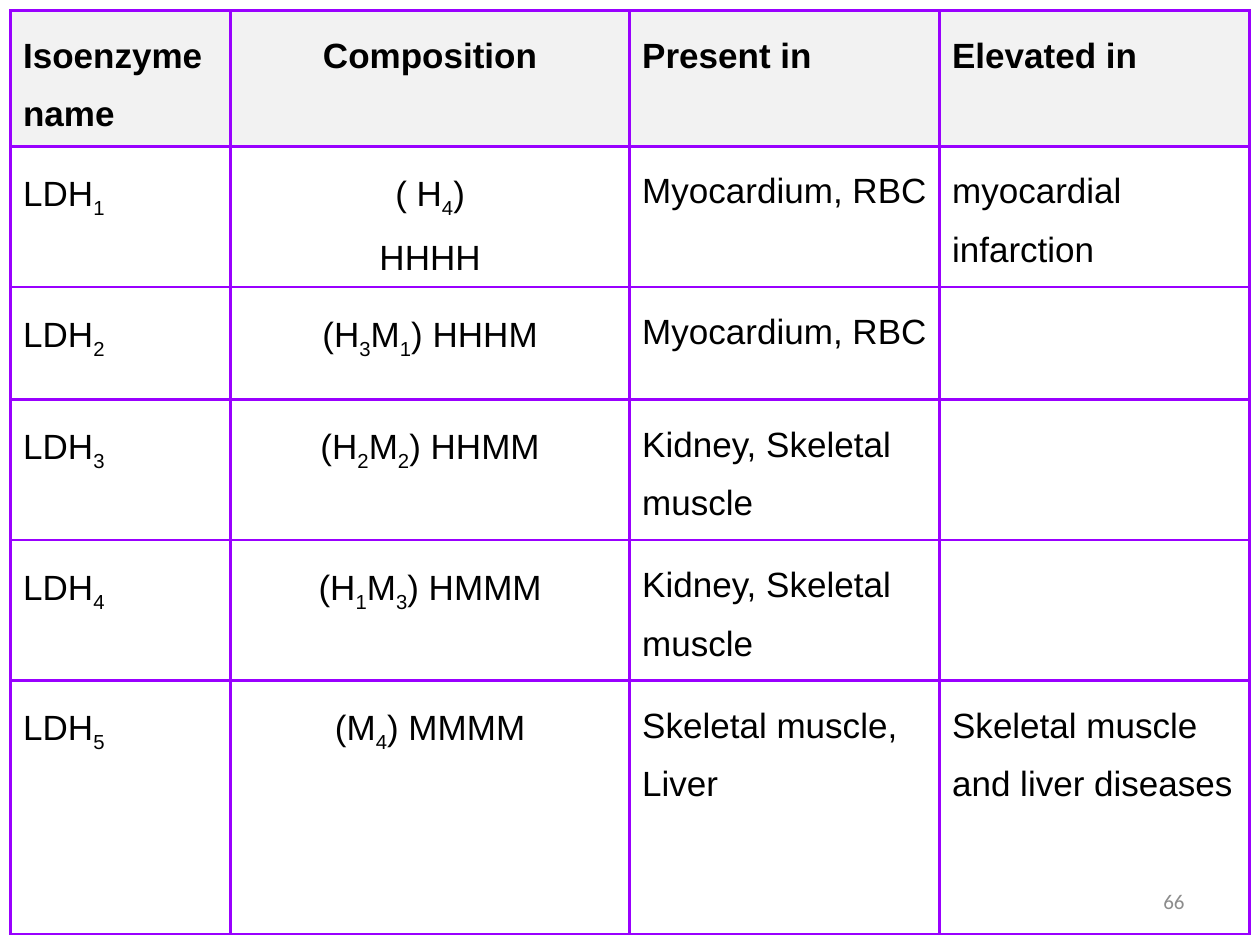
from itertools import groupby

from lxml.etree import SubElement
from pptx import Presentation
from pptx.dml.color import RGBColor
from pptx.enum.text import MSO_ANCHOR as Anchor, PP_ALIGN as Align
from pptx.oxml.ns import qn
from pptx.util import Pt

COLORS = {"text": "000000", "header": "F2F2F2", "border": "9900FF", "number": "8C8C8C"}
COLUMN_WIDTHS = [125.8, 228, 177.1, 177.1]
ROW_HEIGHTS = [77.7, 80.3, 64.4, 80.3, 80.3, 144.6]
ISOENZYMES = [
    ["Isoenzyme name", "Composition", "Present in", "Elevated in"],
    ["LDH1", "( H4)\nHHHH", "Myocardium, RBC", "myocardial infarction"],
    ["LDH2", "(H3M1) HHHM", "Myocardium, RBC", ""],
    ["LDH3", "(H2M2) HHMM", "Kidney, Skeletal muscle", ""],
    ["LDH4", "(H1M3) HMMM", "Kidney, Skeletal muscle", ""],
    ["LDH5", "(M4) MMMM", "Skeletal muscle, Liver", "Skeletal muscle and liver diseases"],
]


def write_text(frame, text, size=20, font="Arial", color="text", bold=False,
               align=Align.LEFT, spacing=1.5, subscripts=True):
    for index, line in enumerate(text.split("\n")):
        paragraph = frame.add_paragraph() if index else frame.paragraphs[0]
        paragraph.alignment = align
        paragraph.line_spacing = spacing
        for is_digit, letters in groupby(line, str.isdigit):
            run = paragraph.add_run()
            run.text = "".join(letters)
            run.font.size = Pt(size)
            run.font.name = font
            run.font.bold = bold
            run.font.color.rgb = RGBColor.from_string(COLORS[color])
            if is_digit and subscripts:
                run.font._element.set("baseline", "-25000")


def draw_borders(cell, width=1.5):
    properties = cell._tc.get_or_add_tcPr()
    for side in ("lnL", "lnR", "lnT", "lnB"):
        border = SubElement(properties, qn(f"a:{side}"), w=str(Pt(width)))
        fill = SubElement(border, qn("a:solidFill"))
        SubElement(fill, qn("a:srgbClr"), val=COLORS["border"])


def fill_cell(cell, text, is_header, align):
    draw_borders(cell)
    if is_header:
        cell.fill.solid()
        cell.fill.fore_color.rgb = RGBColor.from_string(COLORS["header"])
    else:
        cell.fill.background()
    write_text(cell.text_frame, text, bold=is_header, align=align)


def add_isoenzyme_table(slide):
    table = slide.shapes.add_table(
        len(ROW_HEIGHTS), len(COLUMN_WIDTHS), Pt(6), Pt(6),
        Pt(sum(COLUMN_WIDTHS)), Pt(sum(ROW_HEIGHTS))).table
    table.first_row = False
    table.horz_banding = False
    for column, width in zip(table.columns, COLUMN_WIDTHS):
        column.width = Pt(width)
    for row, height in zip(table.rows, ROW_HEIGHTS):
        row.height = Pt(height)
    for row_index, entries in enumerate(ISOENZYMES):
        for column_index, entry in enumerate(entries):
            align = Align.CENTER if column_index == 1 else Align.LEFT
            fill_cell(table.cell(row_index, column_index), entry, row_index == 0, align)


def add_page_number(slide, number):
    frame = slide.shapes.add_textbox(Pt(516), Pt(500.5), Pt(168), Pt(28.75)).text_frame
    frame.word_wrap = True
    frame.vertical_anchor = Anchor.MIDDLE
    write_text(frame, number, size=12, font="Calibri", color="number",
               align=Align.RIGHT, spacing=1.0, subscripts=False)


def main():
    deck = Presentation()
    deck.slide_width, deck.slide_height = Pt(720), Pt(540)
    slide = deck.slides.add_slide(deck.slide_layouts[6])
    add_isoenzyme_table(slide)
    add_page_number(slide, "66")
    deck.save("out.pptx")


if __name__ == "__main__":
    main()
